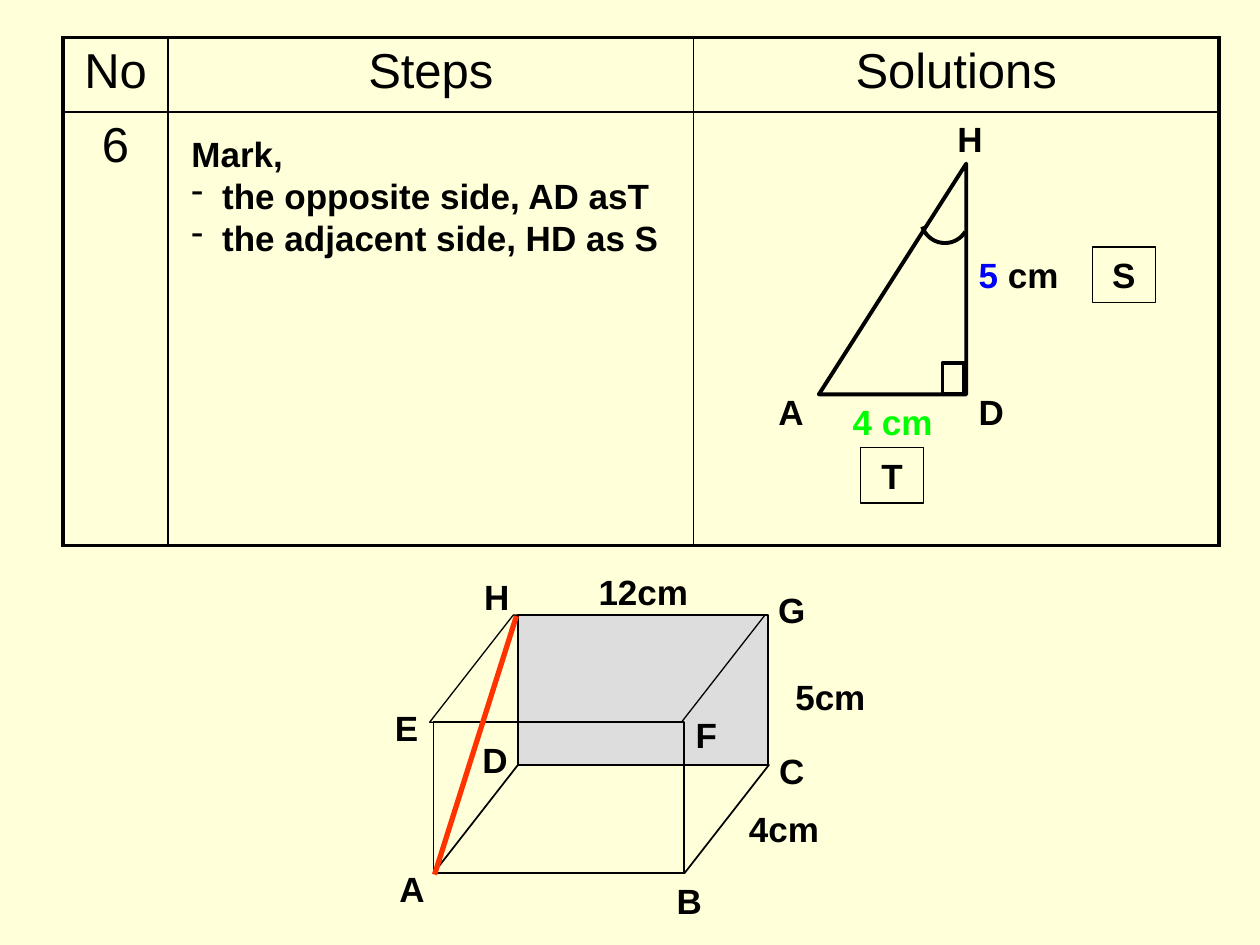
"""Build the slide that marks the sides of triangle HAD and shows its cuboid."""
from math import cos, radians, sin

from lxml.etree import SubElement
from pptx import Presentation
from pptx.dml.color import RGBColor
from pptx.enum.shapes import MSO_CONNECTOR as Link, MSO_SHAPE as Shape
from pptx.enum.text import MSO_ANCHOR as Anchor, PP_ALIGN as Align
from pptx.oxml.ns import qn
from pptx.util import Cm, Pt

hex_color = RGBColor.from_string
BLACK = "000000"


def write(frame, lines, size=20, bold=True, align=Align.CENTER, color=BLACK):
    frame.text = "\n".join(lines)
    frame.word_wrap = True
    for para in frame.paragraphs:
        para.alignment = align
        for span in para.runs:
            span.font.name = "Arial"
            span.font.size = Pt(size)
            span.font.bold = bold
            span.font.color.rgb = hex_color(color)


def outline(shape, width, fill=None):
    shape.shadow.inherit = False
    shape.line.color.rgb = hex_color(BLACK)
    shape.line.width = Pt(width)
    if fill:
        shape.fill.solid()
        shape.fill.fore_color.rgb = hex_color(fill)
    else:
        shape.fill.background()
    return shape


deck = Presentation()
deck.slide_width, deck.slide_height = Cm(25.4), Cm(19.05)
page = deck.slides.add_slide(deck.slide_layouts[6])
page.background.fill.solid()
page.background.fill.fore_color.rgb = hex_color("FFFFD9")

rows = [["No", "Steps", "Solutions"], ["6", "", ""]]
table = page.shapes.add_table(2, 3, Cm(1.27), Cm(0.76), Cm(23.3), Cm(10.24)).table
table.first_row = table.horz_banding = False
for column, width in zip(table.columns, [2.12, 10.59, 10.59]):
    column.width = Cm(width)
for row, height in zip(table.rows, [1.5, 8.74]):
    row.height = Cm(height)
for r, row in enumerate(rows):
    for c, text in enumerate(row):
        cell = table.cell(r, c)
        write(cell.text_frame, [text], 28, False)
        outer = {"lnL": c == 0, "lnR": c == 2, "lnT": r == 0, "lnB": r == 1}
        for side, thick in outer.items():
            border = SubElement(cell._tc.get_or_add_tcPr(), qn(f"a:{side}"), w=str(Pt(2.25 if thick else 1)))
            SubElement(SubElement(border, qn("a:solidFill")), qn("a:srgbClr"), val=BLACK)
        cell.fill.background()

steps = page.shapes.add_textbox(Cm(3.61), Cm(2.54), Cm(10.36), Cm(2.79)).text_frame
steps.vertical_anchor = Anchor.MIDDLE
write(steps, ["Mark,", "the opposite side, AD asT", "the adjacent side, HD as S"], align=Align.LEFT)
for para in steps.paragraphs[1:]:
    props = para._p.get_or_add_pPr()
    props.set("marL", str(Cm(0.62)))
    props.set("indent", str(-Cm(0.62)))
    SubElement(props, qn("a:buChar"), char="-")

triangle = outline(page.shapes.add_shape(Shape.RIGHT_TRIANGLE, Cm(16.51), Cm(3.3), Cm(2.97), Cm(4.65)), 2.25)
triangle._element.spPr.xfrm.set("flipH", "1")
outline(page.shapes.add_shape(Shape.RECTANGLE, Cm(19), Cm(7.32), Cm(0.43), Cm(0.63)), 2.25)

triangle_labels = [
    ("H", 19.05, 2.24, 1.47, BLACK),
    ("D", 19.48, 7.75, 1.47, BLACK),
    ("A", 15.44, 7.75, 1.47, BLACK),
    ("5 cm", 19.48, 4.98, 2.15, BLACK),
    ("4 cm", 16.94, 7.95, 2.15, "00FF00"),
]
for text, left, top, width, color in triangle_labels:
    box = page.shapes.add_textbox(Cm(left), Cm(top), Cm(width), Cm(1.09))
    write(box.text_frame, [text], align=Align.LEFT, color=color)
    if text == "5 cm":
        para = box.text_frame.paragraphs[0]
        para.runs[0].text = "5"
        para.add_run().text = " cm"
        for span, shade in zip(para.runs, ["0000FF", BLACK]):
            span.font.name = "Arial"
            span.font.size = Pt(20)
            span.font.bold = True
            span.font.color.rgb = hex_color(shade)

for text, left, top in [("S", 22.02, 4.98), ("T", 17.35, 9.02)]:
    mark = outline(page.shapes.add_shape(Shape.RECTANGLE, Cm(left), Cm(top), Cm(1.27), Cm(1.12)), 0.75)
    write(mark.text_frame, [text])

arc = [
    (Cm(19.05 + 0.48 * cos(radians(angle))), Cm(4.42 + 0.48 * sin(radians(angle))))
    for angle in range(162, 27, -5)
]
builder = page.shapes.build_freeform(*arc[0])
builder.add_line_segments(arc[1:], close=False)
outline(builder.convert_to_shape(), 2.25)

cuboid = page.shapes.add_group_shape().shapes
faces = [
    (Shape.RECTANGLE, 10.44, 12.4, 5.05, 3.02, 1, "DDDDDD"),
    (Shape.PARALLELOGRAM, 8.66, 12.4, 6.76, 2.16, 0.75, None),
    (Shape.PARALLELOGRAM, 8.74, 15.42, 6.76, 2.18, 1, None),
    (Shape.RECTANGLE, 8.74, 14.55, 5.05, 3.05, 1, None),
]
for kind, left, top, width, height, weight, fill in faces:
    face = outline(cuboid.add_shape(kind, Cm(left), Cm(top), Cm(width), Cm(height)), weight, fill)
    if kind == Shape.PARALLELOGRAM:
        face.adjustments[0] = 0.78
        face.rotation = 180

cuboid_labels = [
    ("5cm", 15.24, 13.49, 3, 1.4),
    ("B", 13.39, 17.6, 0.99, 0.89),
    ("A", 7.62, 17.37, 1.37, 0.86),
    ("C", 15.44, 14.99, 1.04, 0.84),
    ("D", 9.32, 14.76, 1.32, 0.81),
    ("E", 7.42, 14.12, 1.55, 1.22),
    ("H", 9.47, 11.48, 1.09, 0.89),
    ("G", 15.21, 11.73, 1.5, 1.04),
    ("F", 13.26, 14.25, 1.96, 1.22),
    ("4cm", 13.94, 16.15, 3.73, 1.4),
    ("12cm", 11.23, 11.38, 3.48, 1.4),
]
for text, *place in cuboid_labels:
    write(cuboid.add_textbox(*map(Cm, place)).text_frame, [text])

diagonal = cuboid.add_connector(Link.STRAIGHT, Cm(10.41), Cm(12.42), Cm(8.76), Cm(17.63))
diagonal.line.color.rgb = hex_color("FF3300")
diagonal.line.width = Pt(3)
SubElement(diagonal._element.spPr, qn("a:effectLst"))

deck.save("out.pptx")
